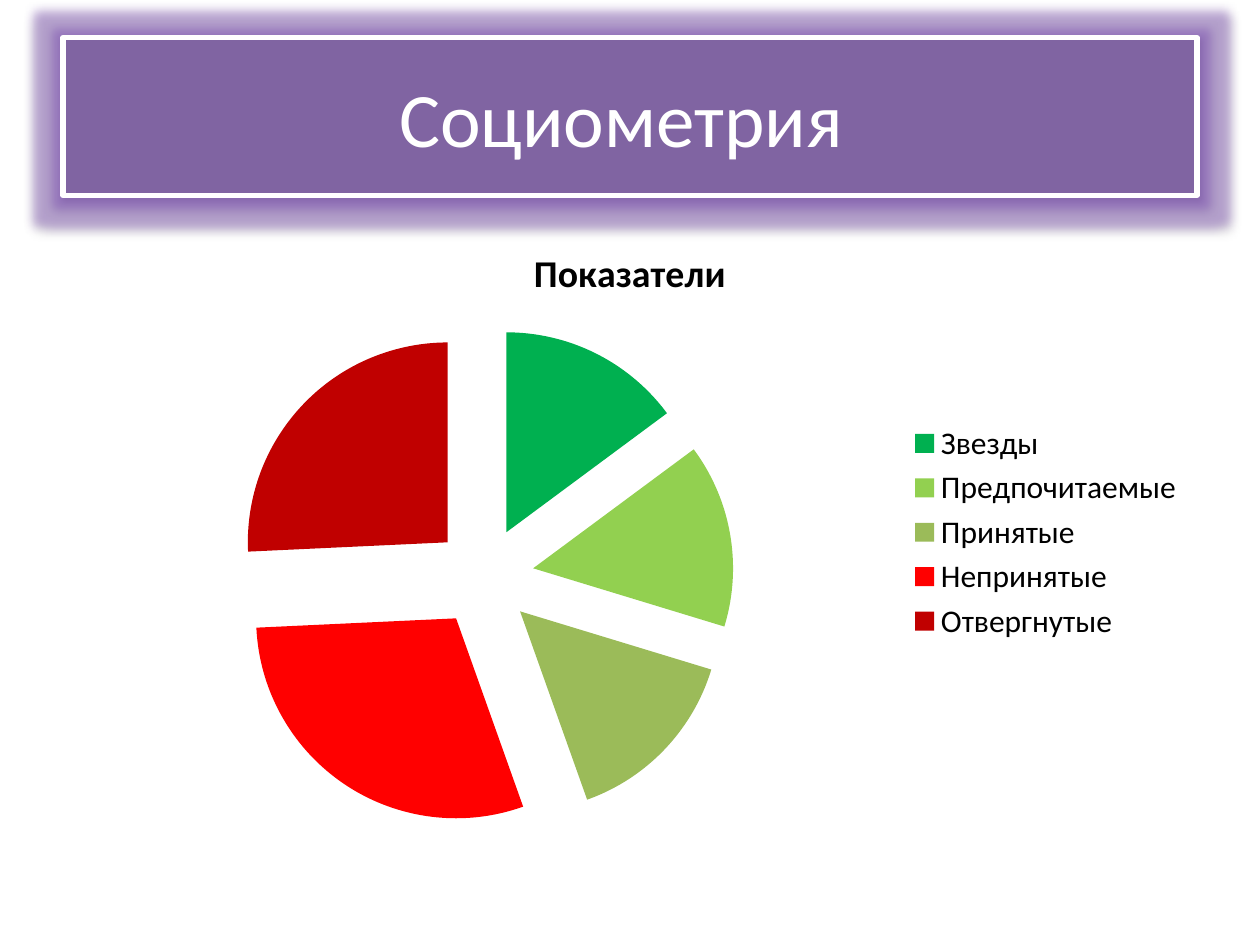
from dataclasses import dataclass

from lxml.etree import SubElement
from pptx import Presentation
from pptx.chart.chart import Chart
from pptx.chart.data import CategoryChartData as Data
from pptx.dml.color import RGBColor
from pptx.enum.chart import XL_CHART_TYPE as Kind, XL_LEGEND_POSITION as Side
from pptx.enum.shapes import MSO_SHAPE as Form
from pptx.enum.text import MSO_ANCHOR as Anchor, PP_ALIGN as Align
from pptx.oxml import parse_xml
from pptx.oxml.ns import nsdecls, qn
from pptx.slide import Slide
from pptx.util import Inches, Pt

WHITE = RGBColor(0xFF, 0xFF, 0xFF)
BLACK = RGBColor(0, 0, 0)
PURPLE = RGBColor(0x80, 0x64, 0xA2)
GREEN = RGBColor(0x00, 0xB0, 0x50)
LIME = RGBColor(0x92, 0xD0, 0x50)
OLIVE = RGBColor(0x9B, 0xBB, 0x59)
RED = RGBColor(0xFF, 0, 0)
DARK = RGBColor(0xC0, 0, 0)
FONT = "Calibri"
WIDE, HIGH = Inches(10), Inches(7.5)
BURST = 25


@dataclass
class Box:
    """Frame given as shares of the slide's size."""
    left: float
    top: float
    width: float
    height: float

    def frame(self) -> tuple[int, int, int, int]:
        """Return the frame in EMU."""
        return (int(self.left * WIDE), int(self.top * HIGH),
                int(self.width * WIDE), int(self.height * HIGH))


@dataclass
class Slice:
    """One slice of the pie."""
    name: str
    value: int
    color: RGBColor


SLICES = [
    Slice("Звезды", 15, GREEN),
    Slice("Предпочитаемые", 15, LIME),
    Slice("Принятые", 15, OLIVE),
    Slice("Непринятые", 30, RED),
    Slice("Отвергнутые", 26, DARK),
]

GLOW = f"""<a:effectLst {nsdecls("a")}>
  <a:glow rad="139700"><a:srgbClr val="{PURPLE}">
    <a:satMod val="175000"/><a:alpha val="40000"/></a:srgbClr></a:glow>
  <a:outerShdw blurRad="40000" dist="20000" dir="5400000" rotWithShape="0">
    <a:srgbClr val="000000"><a:alpha val="38000"/></a:srgbClr></a:outerShdw>
</a:effectLst>"""


def banner(slide: Slide, box: Box, text: str) -> None:
    """Draw the glowing title bar."""
    bar = slide.shapes.add_shape(Form.RECTANGLE, *box.frame())
    bar.fill.solid()
    bar.fill.fore_color.rgb = PURPLE
    bar.line.color.rgb = WHITE
    bar.line.width = Pt(3)
    props = bar.element.spPr
    props.append(parse_xml(GLOW))
    body = bar.text_frame
    body.word_wrap = True
    body.vertical_anchor = Anchor.MIDDLE
    para = body.paragraphs[0]
    para.alignment = Align.CENTER
    run = para.add_run()
    run.text = text
    run.font.name = FONT
    run.font.size = Pt(44)
    run.font.color.rgb = WHITE


def paint(chart: Chart, parts: list[Slice]) -> None:
    """Colour the slices and pull them apart."""
    plot = chart.plots[0]
    plot.vary_by_categories = True
    points = plot.series[0].points
    for i, part in enumerate(parts):
        fill = points[i].format.fill
        fill.solid()
        fill.fore_color.rgb = part.color
    for node in chart.element.iter(qn("c:dPt")):
        burst = SubElement(node, qn("c:explosion"))
        burst.set("val", str(BURST))
        node.find(qn("c:spPr")).addprevious(burst)


def pie(slide: Slide, box: Box, title: str, parts: list[Slice]) -> None:
    """Draw the pie with its title and legend."""
    data = Data()
    data.categories = [part.name for part in parts]
    data.add_series(title, [part.value for part in parts])
    chart = slide.shapes.add_chart(Kind.PIE, *box.frame(), data).chart
    chart.font.name = FONT
    chart.font.size = Pt(18)
    chart.font.color.rgb = BLACK
    chart.has_title = True
    run = chart.chart_title.text_frame.paragraphs[0].add_run()
    run.text = title
    run.font.name = FONT
    run.font.size = Pt(21.6)
    run.font.bold = True
    run.font.color.rgb = BLACK
    chart.has_legend = True
    chart.legend.position = Side.RIGHT
    chart.legend.include_in_layout = False
    paint(chart, parts)


def main() -> None:
    """Build and save the slide."""
    deck = Presentation()
    deck.slide_width, deck.slide_height = WIDE, HIGH
    slide = deck.slides.add_slide(deck.slide_layouts[6])
    banner(slide, Box(0.05, 0.04, 0.9, 1.25 / 7.5), "Социометрия ")
    pie(slide, Box(0.05, 1.75 / 7.5, 0.9, 0.66), "Показатели", SLICES)
    deck.save("out.pptx")


if __name__ == "__main__":
    main()
